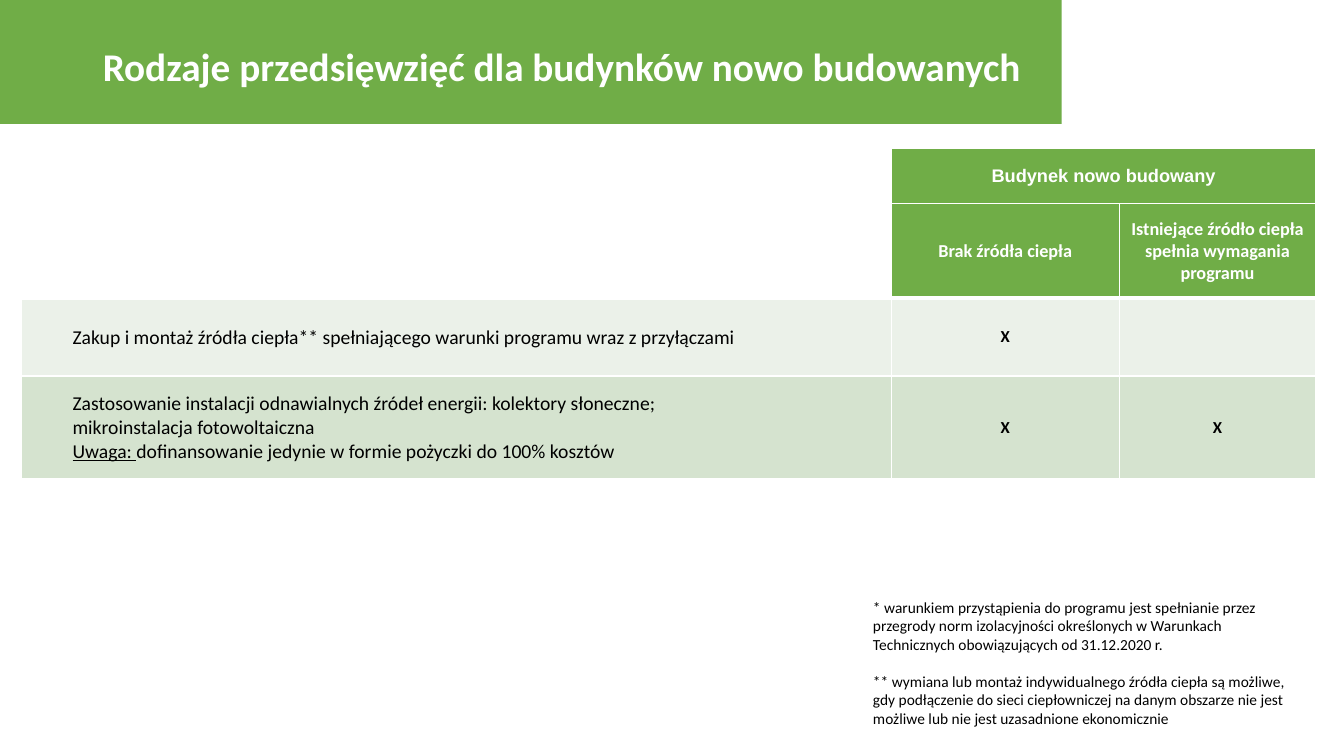
from lxml.etree import SubElement
from pptx import Presentation
from pptx.dml.color import RGBColor
from pptx.enum.shapes import MSO_SHAPE
from pptx.enum.text import MSO_ANCHOR, MSO_AUTO_SIZE, PP_ALIGN
from pptx.oxml.ns import qn
from pptx.util import Inches, Pt

GREEN = RGBColor(0x70, 0xAD, 0x47)
PALE_GREEN = RGBColor(0xEB, 0xF1, 0xE9)
SOFT_GREEN = RGBColor(0xD5, 0xE3, 0xCF)
WHITE = RGBColor(0xFF, 0xFF, 0xFF)
BLACK = RGBColor(0, 0, 0)

COLUMN_WIDTHS = (8.63, 2.26, 1.95)
ROW_HEIGHTS = (0.55, 0.94, 0.77, 1.02)
ROW_FILLS = (GREEN, GREEN, PALE_GREEN, SOFT_GREEN)
HEADER_ROWS = 2

PURCHASE = "Zakup i montaż źródła ciepła** spełniającego warunki programu wraz z przyłączami"
RENEWABLES = "Zastosowanie instalacji odnawialnych źródeł energii: kolektory słoneczne;"
MICROPLANT = "mikroinstalacja fotowoltaiczna"
LOAN_LABEL = "Uwaga: "
LOAN = "dofinansowanie jedynie w formie pożyczki do 100% kosztów"
MARKS = (
    ("Budynek nowo budowany", ""),
    ("Brak źródła ciepła", "Istniejące źródło ciepła spełnia wymagania programu"),
    ("X", ""),
    ("X", "X"),
)
FOOTNOTES = (
    "* warunkiem przystąpienia do programu jest spełnianie przez przegrody norm "
    "izolacyjności określonych w Warunkach Technicznych obowiązujących od 31.12.2020 r.",
    "** wymiana lub montaż indywidualnego źródła ciepła są możliwe, gdy podłączenie do "
    "sieci ciepłowniczej na danym obszarze nie jest możliwe lub nie jest uzasadnione ekonomicznie",
)


def set_font(paragraph, size, color, bold=False, name="Calibri"):
    """Format a whole paragraph."""
    font = paragraph.font
    font.name, font.size, font.bold = name, Pt(size), bold
    font.color.rgb = color


def set_borders(cell, top, bottom):
    """Give a cell white borders, with top and bottom widths in points."""
    properties = cell._tc.get_or_add_tcPr()
    for side, width in (("L", 1), ("R", 1), ("T", top), ("B", bottom)):
        line = SubElement(properties, qn(f"a:ln{side}"), w=str(Pt(width)))
        solid = SubElement(line, qn("a:solidFill"))
        SubElement(solid, qn("a:srgbClr"), val=str(WHITE))


def add_header(slide, left, top, width, height):
    """Place the green band and the slide title in it."""
    band = slide.shapes.add_shape(MSO_SHAPE.RECTANGLE, left, top, width, height)
    band.shadow.inherit = False
    band.fill.solid()
    band.fill.fore_color.rgb = GREEN
    band.line.fill.background()

    title = slide.shapes.title
    title.element.addprevious(band.element)
    indent = Inches(0.92)
    title.left, title.top = left + indent, top + Inches(0.21)
    title.width, title.height = width - indent, Inches(0.94)
    frame = title.text_frame
    frame.text = "Rodzaje przedsięwzięć dla budynków nowo budowanych"
    frame.auto_size = MSO_AUTO_SIZE.NONE
    frame.vertical_anchor = MSO_ANCHOR.MIDDLE
    heading = frame.paragraphs[0]
    heading.alignment = PP_ALIGN.LEFT
    heading.line_spacing = 0.9
    set_font(heading, 28, WHITE, bold=True)


def fill_measures(purchase, renewables):
    """Write the measure descriptions in the first column."""
    purchase.text_frame.text = PURCHASE
    renewables.text_frame.text = RENEWABLES
    details = renewables.text_frame.add_paragraph()
    details.add_run().text = MICROPLANT
    details.add_line_break()
    label = details.add_run()
    label.text = LOAN_LABEL
    label.font.underline = True
    details.add_run().text = LOAN

    for measure in (purchase, renewables):
        measure.margin_left = measure.margin_top = measure.margin_right = Inches(0.01)
        measure.margin_bottom = 0
        for paragraph in measure.text_frame.paragraphs:
            paragraph.level = 1
            indent = paragraph._p.get_or_add_pPr()
            indent.set("marL", str(Inches(0.5)))
            indent.set("indent", "0")
            set_font(paragraph, 14, BLACK)


def add_measures_table(slide, left, top, width, height):
    """Place the table of measures against heat source status."""
    table = slide.shapes.add_table(
        len(ROW_HEIGHTS), len(COLUMN_WIDTHS), left, top, width, height
    ).table
    for column, column_width in zip(table.columns, COLUMN_WIDTHS):
        column.width = Inches(column_width)
    for row, row_height in zip(table.rows, ROW_HEIGHTS):
        row.height = Inches(row_height)

    for r, fill in enumerate(ROW_FILLS):
        for c in range(len(COLUMN_WIDTHS)):
            cell = table.cell(r, c)
            cell.vertical_anchor = MSO_ANCHOR.MIDDLE
            set_borders(cell, 3 if r == HEADER_ROWS else 1, 3 if r == HEADER_ROWS - 1 else 1)
            if c == 0 and r < HEADER_ROWS:
                cell.fill.background()
            else:
                cell.fill.solid()
                cell.fill.fore_color.rgb = fill
            if c > 0:
                cell.text = MARKS[r][c - 1]
                mark = cell.text_frame.paragraphs[0]
                mark.alignment = PP_ALIGN.CENTER
                if r < HEADER_ROWS:
                    set_font(mark, 13, WHITE, True, "Arial" if r == 0 else "Calibri")
                else:
                    set_font(mark, 12, BLACK, True)

    table.cell(0, 0).merge(table.cell(1, 0))
    table.cell(0, 1).merge(table.cell(0, 2))
    fill_measures(table.cell(2, 0), table.cell(3, 0))


def add_footnotes(slide, left, top, width, height):
    """Place the two footnotes."""
    frame = slide.shapes.add_textbox(left, top, width, height).text_frame
    frame.word_wrap = True
    for i, footnote in enumerate(FOOTNOTES):
        paragraph = frame.add_paragraph() if i else frame.paragraphs[0]
        paragraph.text = footnote
        if i:
            paragraph.space_before = Pt(13.4)
        set_font(paragraph, 11, BLACK)


def main():
    """Build and save the slide."""
    presentation = Presentation()
    presentation.slide_width, presentation.slide_height = Inches(13.33), Inches(7.5)
    slide = presentation.slides.add_slide(presentation.slide_layouts[5])
    add_header(slide, 0, 0, Inches(10.53), Inches(1.23))
    add_measures_table(slide, Inches(0.21), Inches(1.47), Inches(12.84), Inches(3.28))
    add_footnotes(slide, Inches(8.56), Inches(5.88), Inches(4.49), Inches(1.4))
    presentation.save("out.pptx")


if __name__ == "__main__":
    main()
